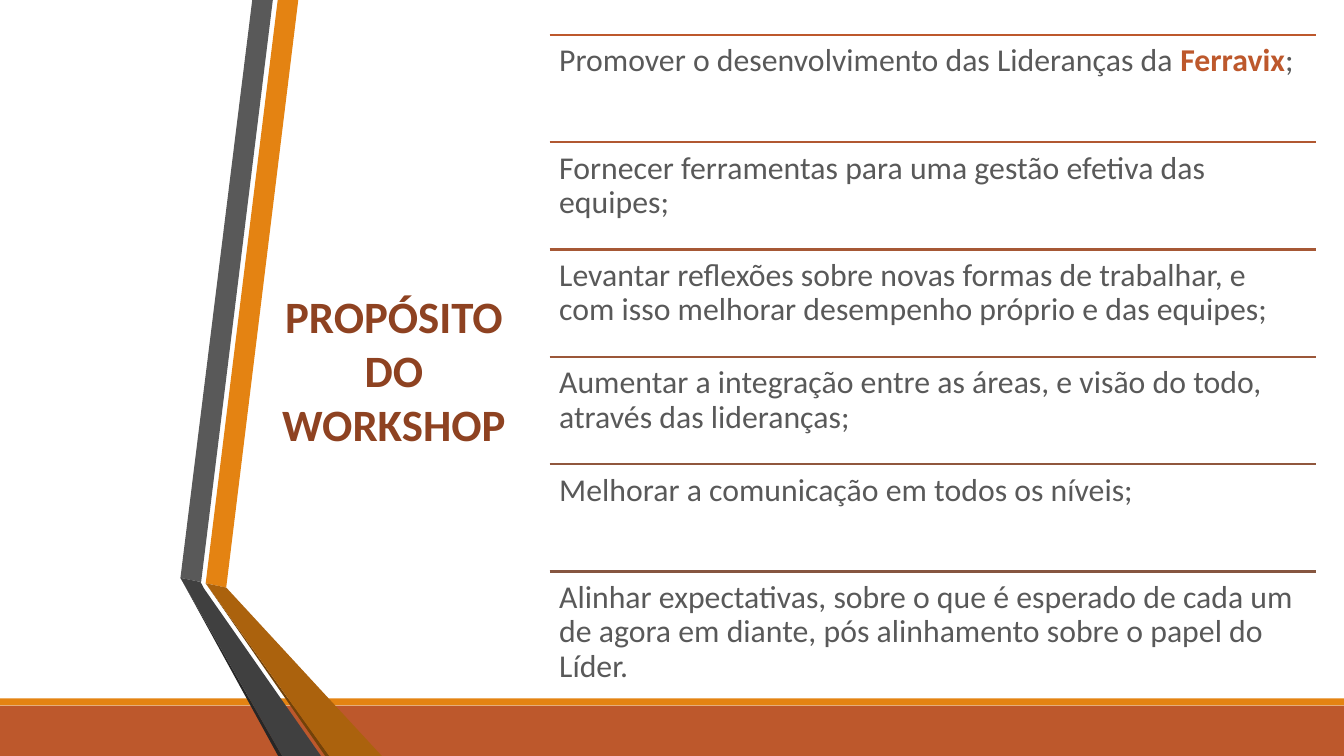
"""Build the workshop purpose slide with its folded ribbons and ruled list."""
from pptx import Presentation
from pptx import util as u
from pptx.dml.color import RGBColor
from pptx.enum import shapes, text
from pptx.oxml.ns import qn
from lxml import etree

RUST = RGBColor(0xBD, 0x58, 0x2C)
ORANGE = RGBColor(0xE4, 0x83, 0x12)
BROWN = RGBColor(0x8E, 0x42, 0x21)
GREY = RGBColor(0x59, 0x59, 0x59)
DARK_GREY = RGBColor(0x40, 0x40, 0x40)
BLACK = RGBColor(0x26, 0x26, 0x26)
DARK_ORANGE = RGBColor(0xAB, 0x62, 0x0D)
DEEP_ORANGE = RGBColor(0x72, 0x42, 0x09)
RULES = [RUST, RGBColor(0xB1, 0x58, 0x31), RGBColor(0xA6, 0x58, 0x35),
         RGBColor(0x9B, 0x57, 0x39), RGBColor(0x90, 0x57, 0x3D),
         RGBColor(0x86, 0x56, 0x40)]


def paint(sp, color):
    sp.shadow.inherit = False
    sp.fill.solid()
    sp.fill.fore_color.rgb = color
    sp.line.fill.background()


def add_text(box, runs, frame, para, font):
    tf = s.shapes.add_textbox(*[u.Pt(v) for v in box]).text_frame
    for key, value in frame.items():
        setattr(tf, key, value)
    p = tf.paragraphs[0]
    for key, value in para.items():
        setattr(p, key, value)
    for words, color, bold in runs:
        r = p.add_run()
        r.text = words
        for key, value in {**font, "bold": bold}.items():
            setattr(r.font, key, value)
        r.font.color.rgb = color


prs = Presentation()
prs.slide_width, prs.slide_height = u.Pt(720), u.Pt(405)
s = prs.slides.add_slide(prs.slide_layouts[6])

for top, height, color in [(378, 27, RUST), (374.2, 3.8, ORANGE)]:
    sp = s.shapes.add_shape(shapes.MSO_SHAPE.RECTANGLE, 0, u.Pt(top), prs.slide_width, u.Pt(height))
    paint(sp, color)

ribbons = [
    (ORANGE, [(110.2, 312.5), (121.2, 314.8), (159.8, 0), (148.8, 0)]),
    (GREY, [(146.2, 0), (135.2, 0), (96.7, 309.6), (107.8, 311.8)]),
    (BLACK, [(96.7, 309.6), (149, 405), (151.2, 405)]),
    (DEEP_ORANGE, [(110.2, 312.5), (174.2, 405), (176.4, 405)]),
    (DARK_ORANGE, [(110.2, 312.5), (176.4, 405), (204.5, 405), (121.2, 314.8)]),
    (DARK_GREY, [(172, 405), (109.4, 315.4), (107.5, 311.8), (96.7, 309.6), (151.2, 405)]),
]
for color, points in ribbons:
    start, *rest = [(u.Pt(x), u.Pt(y)) for x, y in points]
    builder = s.shapes.build_freeform(*start)
    builder.add_line_segments(rest, close=True)
    paint(builder.convert_to_shape(), color)

title_frame = {"word_wrap": True, "vertical_anchor": text.MSO_ANCHOR.MIDDLE,
               "margin_left": u.Pt(5), "margin_right": u.Pt(5),
               "margin_top": u.Pt(2.7), "margin_bottom": u.Pt(2.7)}
add_text((142.6, 121, 136.8, 154), [("PROPÓSITO DO WORKSHOP", BROWN, True)], title_frame,
         {"alignment": text.PP_ALIGN.CENTER, "space_after": u.Pt(4.5)},
         {"name": "Calibri", "size": u.Pt(24)})

goals = [
    [("Promover o desenvolvimento das Lideranças da ", GREY, False),
     ("Ferravix", RUST, True), (";", GREY, False)],
    [("Fornecer ferramentas para uma gestão efetiva das equipes;", GREY, False)],
    [("Levantar reflexões sobre novas formas de trabalhar, e com isso melhorar "
      "desempenho próprio e das equipes;", GREY, False)],
    [("Aumentar a integração entre as áreas, e visão do todo, através das lideranças;",
      GREY, False)],
    [("Melhorar a comunicação em todos os níveis;", GREY, False)],
    [("Alinhar expectativas, sobre o que é esperado de cada um de agora em diante, "
      "pós alinhamento sobre o papel do Líder.", GREY, False)],
]
LEFT, TOP, WIDTH, STEP = 294.5, 18.7, 410.4, 57.5
goal_frame = {"word_wrap": True, "vertical_anchor": text.MSO_ANCHOR.TOP}
goal_frame.update({f"margin_{side}": u.Pt(5.1) for side in ("left", "right", "top", "bottom")})
for i, (runs, color) in enumerate(zip(goals, RULES)):
    y = TOP + i * STEP
    rule = s.shapes.add_connector(shapes.MSO_CONNECTOR.STRAIGHT, u.Pt(LEFT), u.Pt(y),
                                  u.Pt(LEFT + WIDTH), u.Pt(y))
    rule.line.color.rgb = color
    rule.line.width = u.Pt(1.25)
    etree.SubElement(rule._element.spPr, qn("a:effectLst"))
    add_text((LEFT, y, WIDTH, STEP), runs, goal_frame, {"line_spacing": 0.9},
             {"name": "Calibri", "size": u.Pt(17)})

prs.save("out.pptx")
